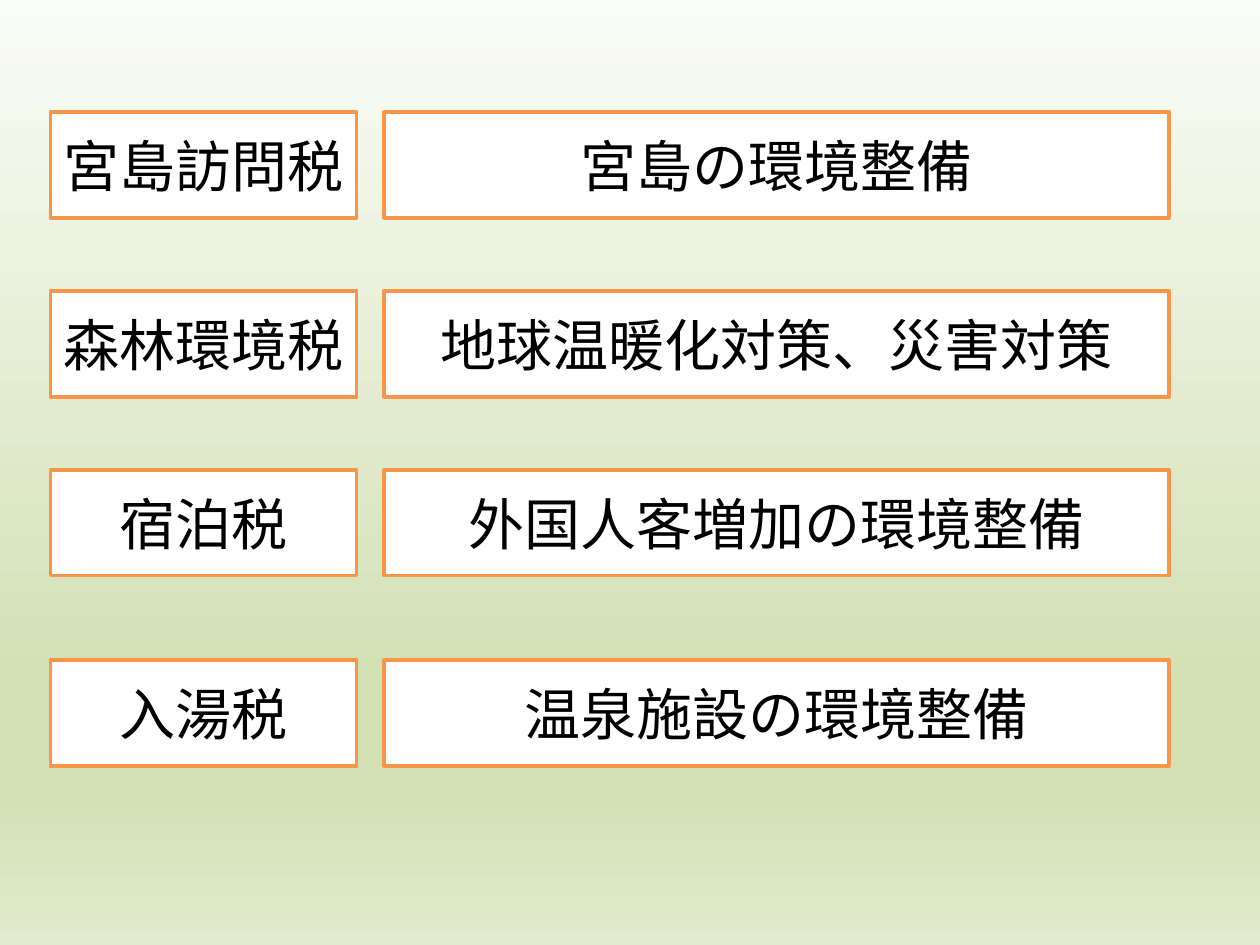
from typing import NamedTuple

from lxml.etree import SubElement
from pptx import Presentation
from pptx.dml.color import RGBColor
from pptx.enum.shapes import MSO_SHAPE
from pptx.enum.text import MSO_ANCHOR, PP_ALIGN
from pptx.oxml.ns import qn
from pptx.util import Inches, Pt


class Tax(NamedTuple):
    name: str
    purpose: str
    top: float


class Column(NamedTuple):
    left: float
    width: float


TAXES = [
    Tax("宮島訪問税", "宮島の環境整備", 0.89),
    Tax("森林環境税", "地球温暖化対策、災害対策", 2.31),
    Tax("宿泊税", "外国人客増加の環境整備", 3.73),
    Tax("入湯税", "温泉施設の環境整備", 5.24),
]
NAME_COLUMN = Column(0.4, 2.43)
PURPOSE_COLUMN = Column(3.05, 6.23)
BOX_HEIGHT = 0.84
BACKGROUND_STOPS = [(0, "FAFCF7"), (74, "D2E0B4"), (83, "D2E0B4"), (100, "E1EBCD")]


def color(value: str) -> RGBColor:
    return RGBColor.from_string(value)


def paint_background(page) -> None:
    fill = page.background.fill
    fill.gradient()
    fill.gradient_angle = 270  # counter-clockwise, so top to bottom
    # A gradient with more than two stops needs XML
    stops = next(page.element.iter(qn("a:gsLst")))
    for stop in list(stops):
        stops.remove(stop)
    for percent, value in BACKGROUND_STOPS:
        stop = SubElement(stops, qn("a:gs"), pos=str(percent * 1000))
        SubElement(stop, qn("a:srgbClr"), val=value)


def add_box(page, column: Column, top: float, text: str) -> None:
    box = page.shapes.add_shape(
        MSO_SHAPE.RECTANGLE,
        Inches(column.left), Inches(top), Inches(column.width), Inches(BOX_HEIGHT),
    )
    box.shadow.inherit = False
    box.fill.solid()
    box.fill.fore_color.rgb = color("FFFFFF")
    box.line.color.rgb = color("F79646")
    box.line.width = Pt(2)

    frame = box.text_frame
    frame.vertical_anchor = MSO_ANCHOR.MIDDLE
    para = frame.paragraphs[0]
    para.text = text
    para.alignment = PP_ALIGN.CENTER
    para.font.name = "Calibri"
    para.font.size = Pt(32)
    para.font.color.rgb = color("000000")


def main() -> None:
    deck = Presentation()
    deck.slide_width, deck.slide_height = Inches(10), Inches(7.5)
    page = deck.slides.add_slide(deck.slide_layouts[6])
    paint_background(page)

    # Each tax beside what it pays for
    for tax in TAXES:
        add_box(page, NAME_COLUMN, tax.top, tax.name)
        add_box(page, PURPOSE_COLUMN, tax.top, tax.purpose)

    deck.save("out.pptx")


if __name__ == "__main__":
    main()
